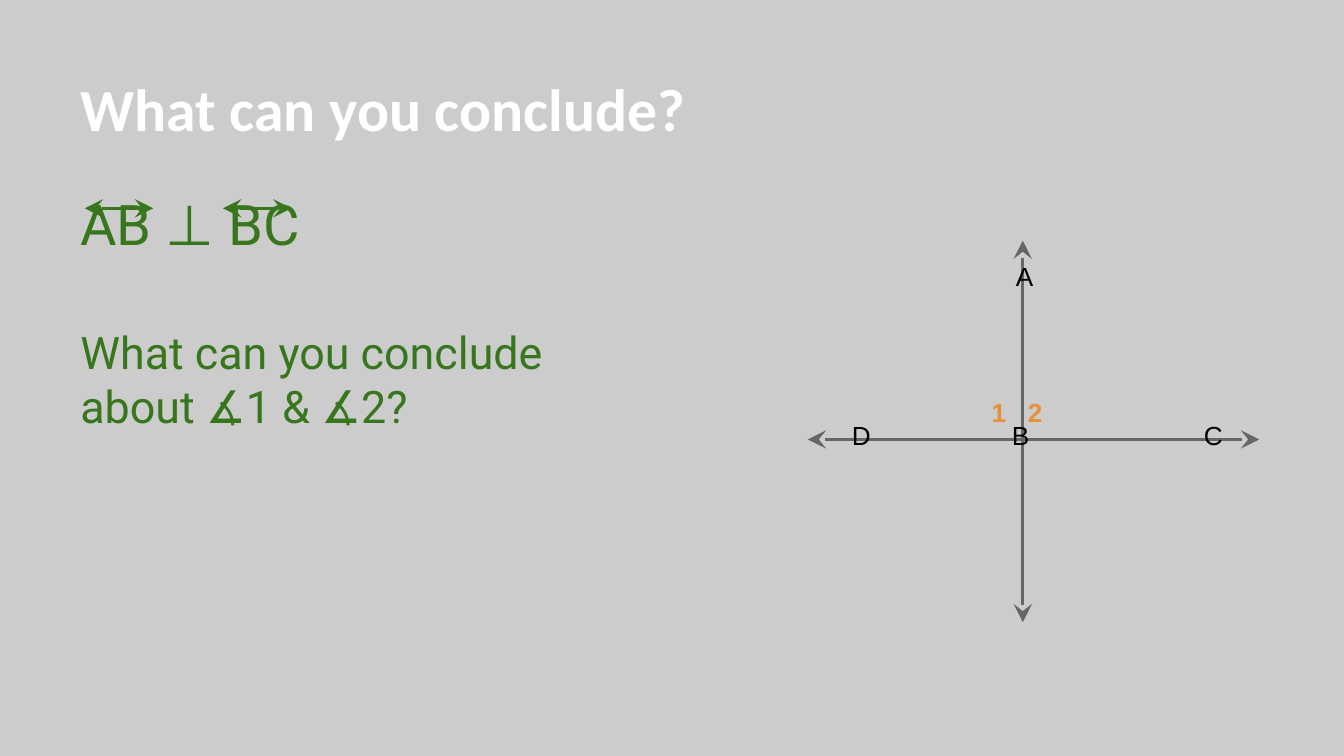
from lxml import etree
from pptx import Presentation
from pptx import util as u
from pptx.dml.color import RGBColor
from pptx.enum import shapes, text
from pptx.oxml.ns import qn

# Content
TITLE = ["What can you conclude?"]
QUESTION = ["AB ⊥ BC", "What can you conclude about ∡1 & ∡2?"]
ANGLES = ["1\t2"]

COLORS = {"back": "CCCCCC", "title": "FFFFFF", "green": "38761D",
          "axis": "666666", "point": "000000", "angle": "E69138"}

# Layout, in inches, on a 16:9 slide
WIDTH = 10
HEIGHT = WIDTH * 9 / 16
MARGIN = WIDTH * 0.05
INSET = 0.1
LABEL_HEIGHT = 0.5
CROSS_X, CROSS_Y = 7.61, 3.27
LABEL_TOP = CROSS_Y - LABEL_HEIGHT / 2
BAR_Y, BAR_LENGTH = 1.55, 0.51
ANGLE_TAB = 0.27

# Point name: left, top, width
POINTS = {"D": (6.24, LABEL_TOP, 0.37), "B": (7.43, LABEL_TOP, 0.37),
          "C": (8.86, LABEL_TOP, 0.37), "A": (7.46, 1.84, 0.3)}

# Start x, start y, end x, end y
AXES = [(6.01, CROSS_Y, 9.37, CROSS_Y), (CROSS_X, 1.79, CROSS_X, 4.63)]
LINE_BARS = [(x, BAR_Y, x + BAR_LENGTH, BAR_Y) for x in (0.63, 1.66)]

FORMATS = {
    "title": {"name": "Calibri", "size": u.Pt(32), "bold": True},
    "statement": {"name": "Roboto", "size": u.Pt(30), "bold": False},
    "question": {"name": "Roboto", "size": u.Pt(24), "bold": False},
    "point": {"name": "Arial", "size": u.Pt(14), "bold": False},
    "angle": {"name": "Arial", "size": u.Pt(14), "bold": True},
}

deck = Presentation()
deck.slide_width, deck.slide_height = u.Inches(WIDTH), u.Inches(HEIGHT)
slide = deck.slides.add_slide(deck.slide_layouts[6])
slide.background.fill.solid()
slide.background.fill.fore_color.rgb = RGBColor.from_string(COLORS["back"])


def add_text(lines, formats, color, place, anchor=text.MSO_ANCHOR.TOP,
             gap=0, tab=None):
    box = slide.shapes.add_textbox(*(u.Inches(v) for v in place))
    frame = box.text_frame
    frame.word_wrap = True
    frame.vertical_anchor = anchor
    for side in ("left", "top", "right", "bottom"):
        setattr(frame, f"margin_{side}", u.Inches(INSET))
    for i, (line, style) in enumerate(zip(lines, formats)):
        paragraph = frame.add_paragraph() if i else frame.paragraphs[0]
        if i:
            paragraph.space_before = u.Pt(gap)
        if tab:
            stops = etree.SubElement(paragraph._p.get_or_add_pPr(), qn("a:tabLst"))
            etree.SubElement(stops, qn("a:tab"), pos=str(u.Inches(tab)), algn="l")
        run = paragraph.add_run()
        run.text = line
        for key, value in FORMATS[style].items():
            setattr(run.font, key, value)
        run.font.color.rgb = RGBColor.from_string(COLORS[color])


def add_double_arrow(ends, color):
    arrow = slide.shapes.add_connector(
        shapes.MSO_CONNECTOR.STRAIGHT, *(u.Inches(v) for v in ends))
    arrow.line.width = u.Pt(1.5)
    arrow.line.color.rgb = RGBColor.from_string(COLORS[color])
    for end in ("a:headEnd", "a:tailEnd"):
        etree.SubElement(arrow.line._get_or_add_ln(), qn(end),
                         type="stealth", w="lg", len="lg")
    etree.SubElement(arrow._element.spPr, qn("a:effectLst"))


# Title and question
add_text(TITLE, ["title"], "title", (MARGIN, 0.23, WIDTH - 2 * MARGIN, 0.94),
         anchor=text.MSO_ANCHOR.BOTTOM)
add_text(QUESTION, ["statement", "question"], "green",
         (MARGIN, 1.31, 4.37, 4.07), gap=36.5)

# Perpendicular lines with their points and angles
for ends in AXES:
    add_double_arrow(ends, "axis")
for point, (left, top, width) in POINTS.items():
    add_text([point], ["point"], "point", (left, top, width, LABEL_HEIGHT))
add_text(ANGLES, ["angle"], "angle", (7.28, 2.85, 0.66, LABEL_HEIGHT),
         tab=ANGLE_TAB)

# Line signs above AB and BC
for ends in LINE_BARS:
    add_double_arrow(ends, "green")

deck.save("out.pptx")
